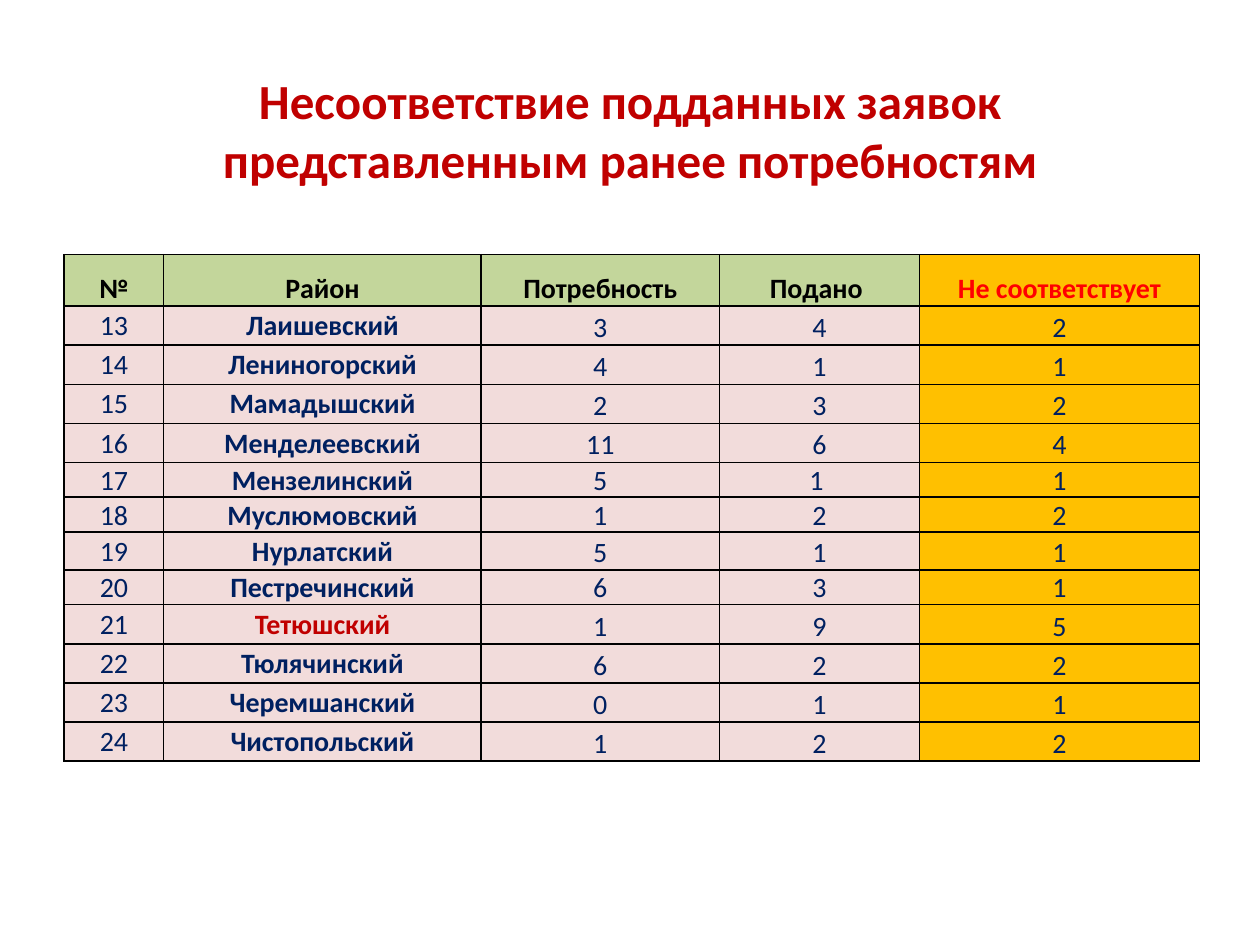
import pptx
import pptx.dml.color
import pptx.enum.text
import pptx.oxml
import pptx.oxml.ns
import pptx.util

Inches = pptx.util.Inches
ANCHOR = pptx.enum.text.MSO_ANCHOR
CENTER = pptx.enum.text.PP_ALIGN.CENTER
NAVY, RED, PINK, GREEN, AMBER = "002060", "C00000", "F2DCDB", "C3D69B", "FFC000"

HEADINGS = ["№", "Район", "Потребность", "Подано ", "Не соответствует"]
FIRST_NUMBER = 13
HIGHLIGHTED = "Тетюшский"
DISTRICTS = [
    ("Лаишевский", "3", "4", "2"),
    ("Лениногорский", "4", "1", "1"),
    ("Мамадышский", "2", "3", "2"),
    ("Менделеевский", "11", "6", "4"),
    ("Мензелинский", "5", "1 ", "1"),
    ("Муслюмовский", "1", "2", "2"),
    ("Нурлатский", "5", "1", "1"),
    ("Пестречинский", "6", "3", "1"),
    ("Тетюшский", "1", "9", "5"),
    ("Тюлячинский", "6", "2", "2"),
    ("Черемшанский", "0", "1", "1"),
    ("Чистопольский", "1", "2", "2"),
]
COLUMN_WIDTHS = [0.79, 2.52, 1.89, 1.59, 2.22]
HEADER_HEIGHT, ROW_HEIGHT = 0.41, 0.31
OTHER_HEIGHTS = {17: 0.24, 18: 0.24, 19: 0.3, 20: 0.24}


def style_text(frame, size, color, bold):
    """Centre the frame's only paragraph and format its run."""
    paragraph = frame.paragraphs[0]
    paragraph.alignment = CENTER
    font = paragraph.runs[0].font
    font.name, font.size, font.bold = "Calibri", pptx.util.Pt(size), bold
    font.color.rgb = pptx.dml.color.RGBColor.from_string(color)


def paint_cell(cell, color):
    """Draw black one-point borders, then fill the cell."""
    properties = cell._tc.get_or_add_tcPr()
    for side in ("lnL", "lnR", "lnT", "lnB"):
        properties.append(pptx.oxml.parse_xml(
            f'<a:{side} {pptx.oxml.ns.nsdecls("a")} w="12700"><a:solidFill>'
            f'<a:srgbClr val="000000"/></a:solidFill></a:{side}>'))
    cell.fill.solid()
    cell.fill.fore_color.rgb = pptx.dml.color.RGBColor.from_string(color)


deck = pptx.Presentation()
deck.slide_width, deck.slide_height = Inches(10), Inches(7.5)
page = deck.slides.add_slide(deck.slide_layouts[6])

title = page.shapes.add_textbox(Inches(0.5), Inches(0.44), Inches(9), Inches(1.18))
title.text_frame.word_wrap = True
title.text_frame.vertical_anchor = ANCHOR.MIDDLE
title.text_frame.text = "Несоответствие подданных заявок представленным ранее потребностям"
style_text(title.text_frame, 28, RED, True)

numbered = [(str(number), *district)
            for number, district in enumerate(DISTRICTS, FIRST_NUMBER)]
rows = [HEADINGS] + numbered
heights = [HEADER_HEIGHT] + [OTHER_HEIGHTS.get(int(row[0]), ROW_HEIGHT) for row in numbered]
table = page.shapes.add_table(
    len(rows), len(HEADINGS), Inches(0.51), Inches(2.02),
    Inches(sum(COLUMN_WIDTHS)), Inches(sum(heights))).table
for column, width in zip(table.columns, COLUMN_WIDTHS):
    column.width = Inches(width)

for row_index, (row, height) in enumerate(zip(rows, heights)):
    table.rows[row_index].height = Inches(height)
    is_header = row_index == 0
    for column_index, text in enumerate(row):
        is_last = column_index == len(HEADINGS) - 1
        cell = table.cell(row_index, column_index)
        cell.margin_left = cell.margin_right = cell.margin_top = Inches(0.01)
        cell.margin_bottom = 0
        centred = not is_header and column_index < 2
        cell.vertical_anchor = ANCHOR.MIDDLE if centred else ANCHOR.BOTTOM
        if is_header:
            color = "FF0000" if is_last else "000000"
        else:
            color = RED if text == HIGHLIGHTED else NAVY
        cell.text_frame.text = text
        style_text(cell.text_frame, 16, color, is_header or column_index == 1)
        paint_cell(cell, AMBER if is_last else GREEN if is_header else PINK)

deck.save("out.pptx")
